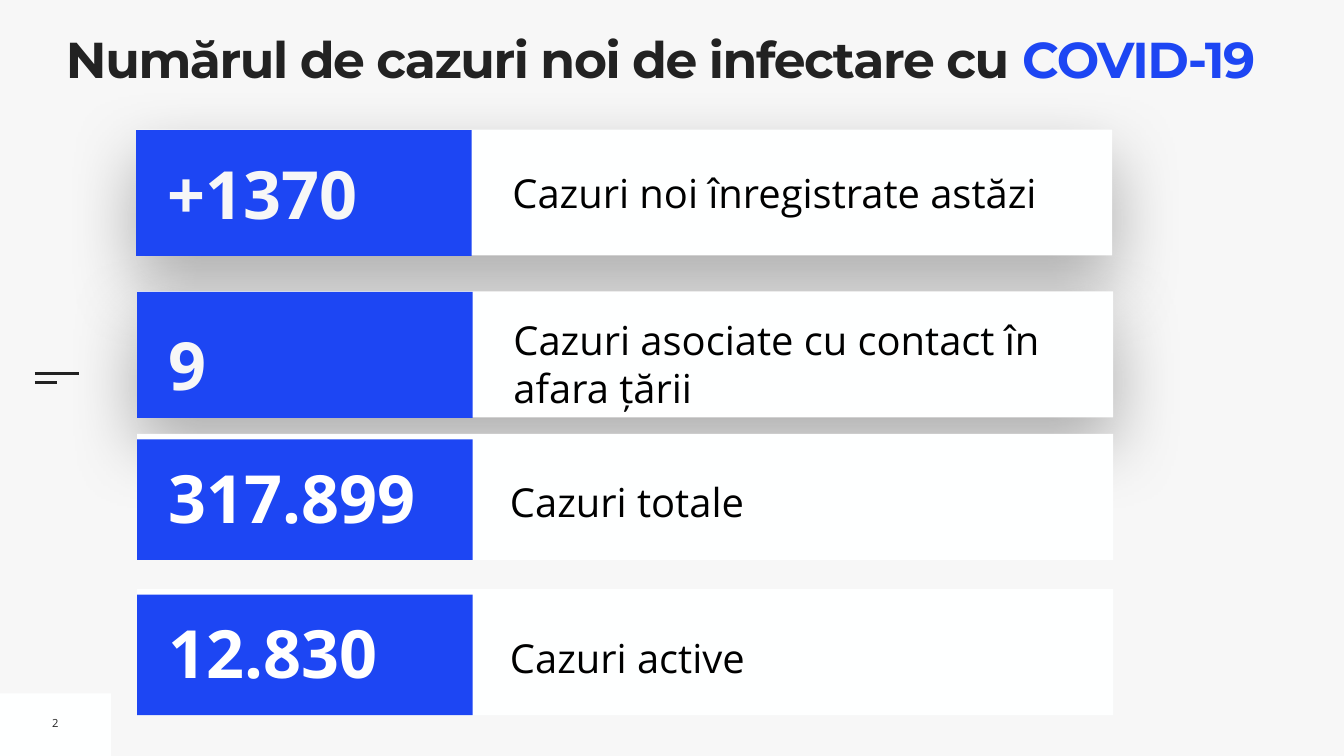
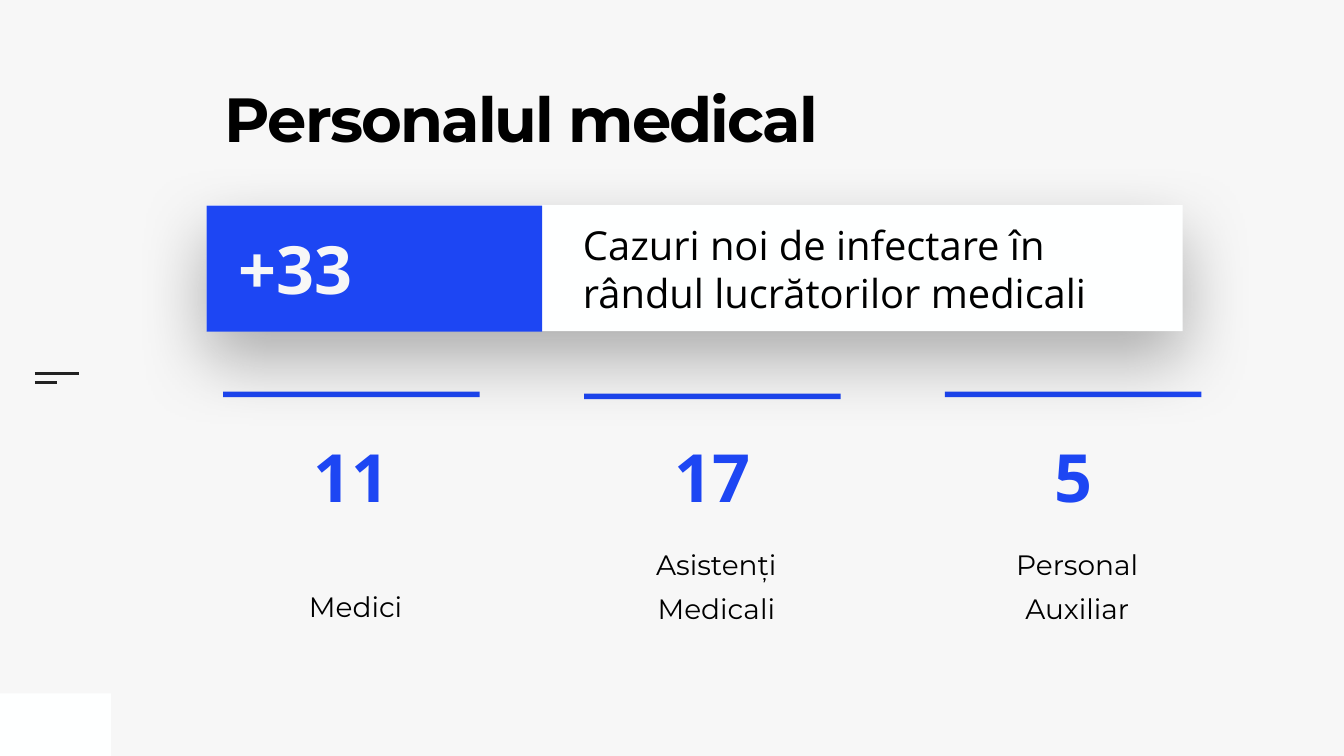
from lxml import etree
from pptx import Presentation
from pptx.dml.color import RGBColor
from pptx.enum import shapes, text
from pptx.oxml import ns
from pptx.util import Inches, Pt

COLORS = {
    "background": "F7F7F7",
    "card": "FEFFFF",
    "accent": "1D46F3",
    "ink": "222222",
    "label": "000000",
    "white": "FFFFFF",
}
HEADING_FONT = "Montserrat"
BODY_FONT = "Open Sans"
CARD_SIZE = (19.37, 2.5)
ACCENT_WIDTH = 6.66
COLUMN_SIZE = (5.09, 5.46)
COLUMN_PITCH = 7.16
TEXT_INSETS = (0.1, 0.1, 0.1, 0.1)
NO_INSETS = (0, 0, 0, 0)


def rgb(name):
    return RGBColor.from_string(COLORS[name])


def add_rect(parent, box, fill):
    rect = parent.add_shape(shapes.MSO_SHAPE.RECTANGLE, *map(Inches, box))
    rect.shadow.inherit = False
    rect.fill.solid()
    rect.fill.fore_color.rgb = rgb(fill)
    rect.line.fill.background()
    return rect


def add_soft_shadow(shape):
    effects = shape._element.spPr.find(ns.qn("a:effectLst"))
    outer = etree.SubElement(
        effects, ns.qn("a:outerShdw"), blurRad=str(Pt(100)), dist=str(Pt(40)),
        dir="5400000", algn="ctr", rotWithShape="0")
    color = etree.SubElement(outer, ns.qn("a:srgbClr"), val="000000")
    etree.SubElement(color, ns.qn("a:alpha"), val="30000")


def add_line(slide, left, top, width):
    line = slide.shapes.add_connector(
        shapes.MSO_CONNECTOR.STRAIGHT,
        Inches(left), Inches(top), Inches(left + width), Inches(top))
    line.line.color.rgb = rgb("ink")
    line.line.width = Pt(3)
    etree.SubElement(line._element.spPr, ns.qn("a:effectLst"))


def write(shape, runs, size, font=BODY_FONT, bold=False, align="LEFT",
          anchor="MIDDLE", insets=TEXT_INSETS, spacing=None, before=None,
          tracking=None, wrap=True):
    """Fill a shape with one paragraph; runs are (words, colour) pairs."""
    frame = shape.text_frame
    frame.word_wrap = wrap
    frame.vertical_anchor = text.MSO_ANCHOR[anchor]
    (frame.margin_left, frame.margin_top,
     frame.margin_right, frame.margin_bottom) = map(Inches, insets)
    paragraph = frame.paragraphs[0]
    paragraph.alignment = text.PP_ALIGN[align]
    paragraph.line_spacing = spacing
    paragraph.space_before = before
    paragraph.font.name = font
    paragraph.font.size = Pt(size)
    paragraph.font.bold = bold
    for words, color in runs:
        run = paragraph.add_run()
        run.text = words
        run.font.color.rgb = rgb(color)
        if tracking:
            run._r.get_or_add_rPr().set("spc", str(round(tracking * 100)))


def add_text(parent, box, runs, size, **style):
    write(parent.add_textbox(*map(Inches, box)), runs, size, **style)


def add_title(slide, box, runs, size, tracking):
    add_text(slide.shapes, box, runs, size, font=HEADING_FONT, bold=True,
             anchor="TOP", insets=NO_INSETS, spacing=0.8, tracking=tracking)


def add_big_number(parent, box, number, color, align="LEFT"):
    add_text(parent, box, [(number, color)], 95, bold=True, align=align)


def new_slide(prs, page=None):
    slide = prs.slides.add_slide(prs.slide_layouts[6])
    slide.background.fill.solid()
    slide.background.fill.fore_color.rgb = rgb("background")
    # Corner tab and side mark
    add_rect(slide.shapes, (0, 13.76, 2.2, 1.24), "card")
    add_line(slide, 0.69, 7.41, 0.88)
    add_line(slide, 0.69, 7.59, 0.44)
    if page:
        add_text(slide.shapes, (0.93, 14.09, 0.34, 0.51), [(page, "ink")], 16,
                 align="CENTER", wrap=False)
    return slide


def add_raised_card(slide, left, top, number, label, label_box, number_drop=0.35):
    """Card with a soft shadow; label_box is (offset from top, height)."""
    card = slide.shapes.add_group_shape().shapes
    width, height = CARD_SIZE
    add_soft_shadow(add_rect(card, (left, top, width, height), "card"))
    drop, label_height = label_box
    add_text(card, (left + 7.37, top + drop, 11.76, label_height),
             [(label, "label")], 57)
    add_rect(card, (left, top + 0.01, ACCENT_WIDTH, height), "accent")
    add_big_number(card, (left + 0.53, top + number_drop, 6.03, 1.8),
                   number, "background")


def add_flat_card(slide, left, top, number, label, label_box):
    card = slide.shapes.add_group_shape().shapes
    width, height = CARD_SIZE
    add_rect(card, (left, top, width, height), "card")
    drop, label_height = label_box
    add_text(card, (left + 7.4, top + drop, 11.58, label_height),
             [(label, "label")], 57, insets=NO_INSETS, spacing=1.3, before=Pt(20))
    add_rect(card, (left, top + 0.11, ACCENT_WIDTH, height - 0.11), "accent")
    add_big_number(card, (left + 0.53, top + 0.35, 6.03, 1.8), number, "white")


def add_staff_column(slide, left, panel_top, rule_top, number, role):
    width, height = COLUMN_SIZE
    panel = add_rect(slide.shapes, (left, panel_top, width, height), "background")
    write(panel, [(role, "label")], 40, font=HEADING_FONT, align="CENTER",
          anchor="BOTTOM", insets=(0.55, 0.71, 0.39, 0.87), spacing=1.3,
          before=Pt(20))
    add_rect(slide.shapes, (left, rule_top, width, 0.11), "accent")
    add_big_number(slide.shapes, (left, 8.54, width, 1.8), number, "accent",
                   align="CENTER")


def build_new_cases(prs):
    slide = new_slide(prs, page="2")
    add_title(slide, (1.31, 0.78, 23.94, 1.58),
              [("Numărul de cazuri noi de infectare cu ", "ink"),
               ("COVID-19", "accent")], 72, -2)
    # Cards, back to front
    add_flat_card(slide, 2.72, 11.69, "12.830", "Cazuri active", (0.58, 1.25))
    add_raised_card(slide, 2.7, 2.57, "+1370", "Cazuri noi înregistrate astăzi",
                    (0.67, 1.16))
    add_raised_card(slide, 2.72, 5.78, "9",
                    "Cazuri asociate cu contact în afara țării",
                    (0.38, 2.12), number_drop=0.54)
    add_flat_card(slide, 2.72, 8.61, "317.899", "Cazuri totale", (0.64, 1.12))


def build_medical_staff(prs):
    slide = new_slide(prs)
    # Staff columns
    staff = [
        ("11", "Medici", 7.77, 7.77),
        ("17", "Asistenți Medicali", 7.81, 7.81),
        ("5", "Personal Auxiliar", 7.81, 7.77),
    ]
    for index, (number, role, panel_top, rule_top) in enumerate(staff):
        add_staff_column(slide, 4.43 + index * COLUMN_PITCH, panel_top, rule_top,
                         number, role)
    # Heading and total
    add_title(slide, (4.46, 1.87, 13.01, 2.73),
              [("Personalul medical", "label")], 89, -2.7)
    add_raised_card(slide, 4.1, 4.07, "+33",
                    "Cazuri noi de infectare în rândul lucrătorilor medicali",
                    (0.19, 2.12))


def main():
    prs = Presentation()
    prs.slide_width = Inches(26.67)
    prs.slide_height = Inches(15)
    build_new_cases(prs)
    build_medical_staff(prs)
    prs.save("out.pptx")


if __name__ == "__main__":
    main()
